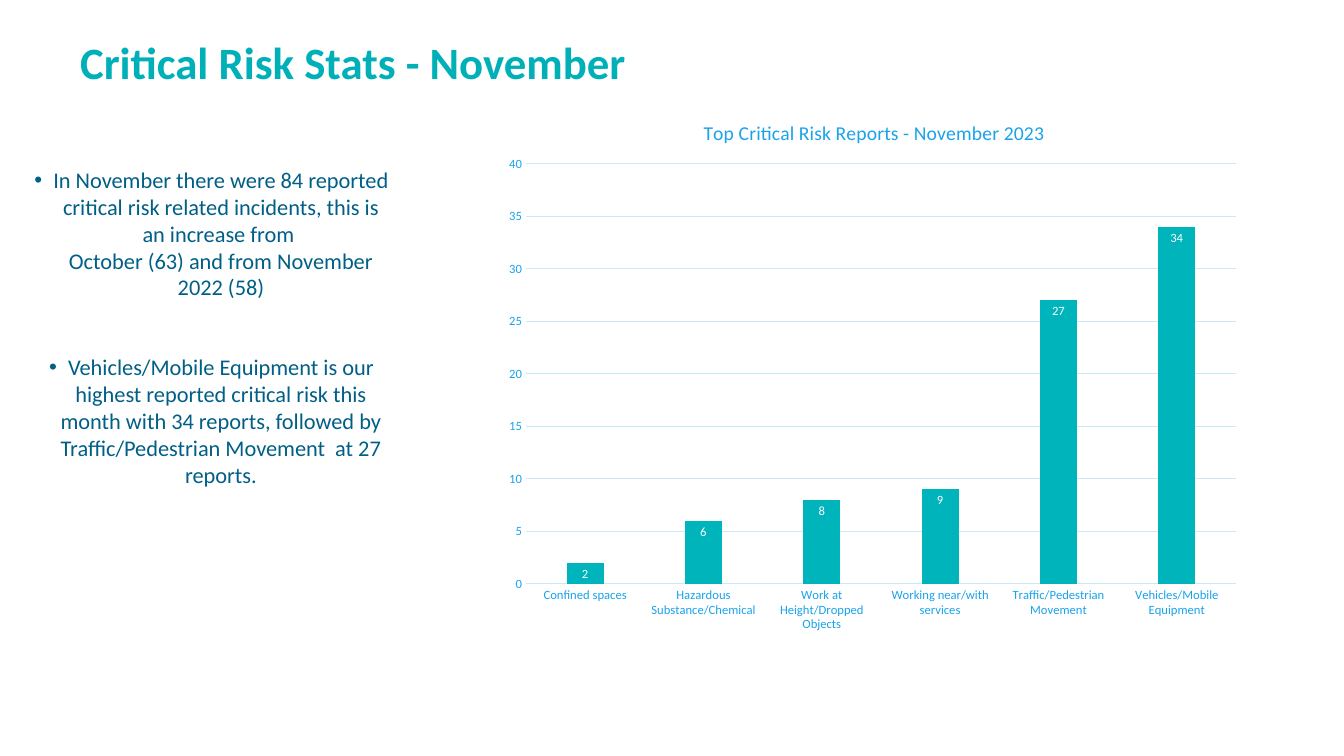
from pptx import Presentation
from pptx.chart.data import CategoryChartData
from pptx.dml.color import RGBColor
from pptx.enum.chart import XL_CHART_TYPE, XL_LABEL_POSITION, XL_TICK_MARK
from pptx.enum.text import MSO_ANCHOR, MSO_AUTO_SIZE, PP_ALIGN
from pptx.oxml import parse_xml
from pptx.oxml.ns import nsdecls, qn
from pptx.util import Pt
from lxml.etree import SubElement

# Theme: font, colours and type sizes
THEME = {
    "font": "Calibri",
    "heading": RGBColor(0x00, 0xB0, 0xB9),
    "body": RGBColor(0x00, 0x5F, 0x86),
    "bar": RGBColor(0x00, 0xB4, 0xBC),
    "axis": RGBColor(0x1A, 0xA3, 0xEB),
    "grid": RGBColor(0xCA, 0xEA, 0xFA),
    "label": RGBColor(0xFF, 0xFF, 0xFF),
    "heading_size": Pt(32),
    "body_size": Pt(16),
    "chart_title_size": Pt(14),
    "chart_size": Pt(9),
    "hairline": Pt(0.75),
}
SLIDE_WIDTH, SLIDE_HEIGHT = 1344, 756
EMU_PER_PX = 12192000 / SLIDE_WIDTH
CHART_BOX = (494, 95, 758, 536)
PLOT_BOX = (526, 164, 710, 420)
CHART_TITLE_AT = (700, 116)


def emu(*lengths):
    return [round(length * EMU_PER_PX) for length in lengths]


def style_font(font, size, color, bold=False):
    font.name = THEME["font"]
    font.size = THEME[size]
    font.color.rgb = THEME[color]
    font.bold = bold


presentation = Presentation()
presentation.slide_width, presentation.slide_height = emu(SLIDE_WIDTH, SLIDE_HEIGHT)
slide = presentation.slides.add_slide(presentation.slide_layouts[1])

# Title and body placeholders
title, body = slide.shapes.title, slide.placeholders[1]
for shape, box in ((title, (70, 30, 1205, 94)), (body, (22, 161, 379, 336))):
    shape.left, shape.top, shape.width, shape.height = emu(*box)
    shape.text_frame.word_wrap = True
    shape.text_frame.auto_size = MSO_AUTO_SIZE.NONE
    shape.text_frame.vertical_anchor = MSO_ANCHOR.TOP

paragraph = title.text_frame.paragraphs[0]
paragraph.alignment = PP_ALIGN.LEFT
run = paragraph.add_run()
run.text = "Critical Risk Stats - November"
style_font(run.font, "heading_size", "heading", bold=True)

# Bulleted findings, each a list of lines
findings = [
    ["In November there were 84 reported critical risk related incidents, "
     "this is an increase from ",
     "October (63) and from November 2022 (58)"],
    ["Vehicles/Mobile Equipment is our highest reported critical risk this "
     "month with 34 reports, followed by Traffic/Pedestrian Movement  at 27 reports."],
]
for index, lines in enumerate(findings):
    paragraph = body.text_frame.paragraphs[0] if index == 0 else body.text_frame.add_paragraph()
    paragraph.alignment = PP_ALIGN.CENTER
    paragraph.space_before = Pt(38 if index else 0)
    properties = paragraph._p.get_or_add_pPr()
    indent, = emu(19)
    properties.set("marL", str(indent))
    properties.set("indent", str(-indent))
    SubElement(properties, qn("a:buFont"), typeface="Arial")
    SubElement(properties, qn("a:buChar"), char="•")
    for line_index, line in enumerate(lines):
        if line_index:
            paragraph.add_line_break()
        run = paragraph.add_run()
        run.text = line
        style_font(run.font, "body_size", "body")

# Column chart
reports = {
    "Confined spaces": 2,
    "Hazardous Substance/Chemical": 6,
    "Work at Height/Dropped Objects": 8,
    "Working near/with services": 9,
    "Traffic/Pedestrian Movement": 27,
    "Vehicles/Mobile Equipment": 34,
}
chart_data = CategoryChartData()
chart_data.categories = list(reports)
chart_data.add_series("Series 1", list(reports.values()))
chart = slide.shapes.add_chart(
    XL_CHART_TYPE.COLUMN_CLUSTERED, *emu(*CHART_BOX), chart_data).chart
style_font(chart.font, "chart_size", "axis")
chart.has_legend = False

# Chart title
chart.has_title = True
run = chart.chart_title.text_frame.paragraphs[0].add_run()
run.text = "Top Critical Risk Reports - November 2023"
style_font(run.font, "chart_title_size", "axis")
chart.chart_title.include_in_layout = False

# Columns and their values
plot = chart.plots[0]
plot.gap_width, plot.overlap = 219, -27
plot.vary_by_categories = False
series = plot.series[0]
series.format.fill.solid()
series.format.fill.fore_color.rgb = THEME["bar"]
labels = series.data_labels
labels.show_value = True
labels.position = XL_LABEL_POSITION.INSIDE_END
style_font(labels.font, "chart_size", "label")

# Axes and gridlines
category_axis, value_axis = chart.category_axis, chart.value_axis
for axis in (category_axis, value_axis):
    axis.major_tick_mark = axis.minor_tick_mark = XL_TICK_MARK.NONE
    style_font(axis.tick_labels.font, "chart_size", "axis")
value_axis.minimum_scale, value_axis.maximum_scale, value_axis.major_unit = 0, 40, 5
value_axis.has_major_gridlines = True
value_axis.format.line.fill.background()
for line in (category_axis.format.line, value_axis.major_gridlines.format.line):
    line.color.rgb = THEME["grid"]
    line.width = THEME["hairline"]

# Fixed places for the chart title and the plot, as shares of the chart
chart_left, chart_top, chart_width, chart_height = CHART_BOX
plot_area = chart.plots[0]._element.getparent()
for element, position, box, target in (
        (chart.chart_title._element, 1, CHART_TITLE_AT, ""),
        (plot_area, 0, PLOT_BOX, '<c:layoutTarget val="inner"/>')):
    for old_layout in element.findall(qn("c:layout")):
        element.remove(old_layout)
    shares = [("x", (box[0] - chart_left) / chart_width),
              ("y", (box[1] - chart_top) / chart_height)]
    if len(box) == 4:
        shares += [("w", box[2] / chart_width), ("h", box[3] / chart_height)]
    modes = '<c:xMode val="edge"/><c:yMode val="edge"/>'
    values = "".join(f'<c:{name} val="{share:.4f}"/>' for name, share in shares)
    element.insert(position, parse_xml(
        f'<c:layout {nsdecls("c")}><c:manualLayout>{target}{modes}{values}'
        '</c:manualLayout></c:layout>'))

presentation.save("out.pptx")
